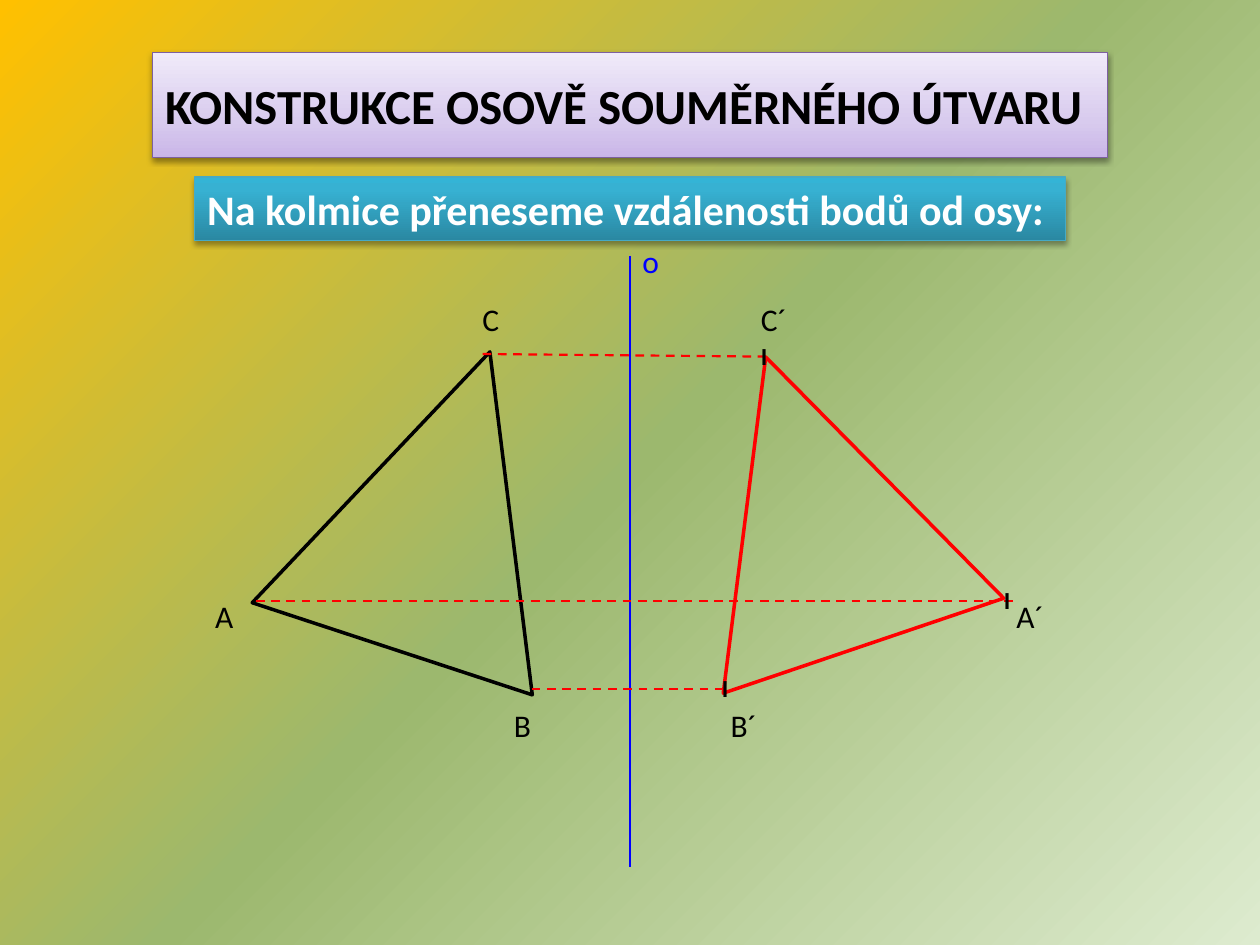
from pptx import Presentation
from pptx.dml.color import RGBColor as RGB
from pptx.enum.dml import MSO_LINE as DASH
from pptx.enum.shapes import MSO_CONNECTOR as CON, MSO_SHAPE as KIND
from pptx.enum.text import MSO_ANCHOR as ANCHOR, MSO_AUTO_SIZE as AUTO, PP_ALIGN as ALIGN
from pptx.oxml.ns import qn
from pptx.util import Pt
from lxml.etree import SubElement as Sub

BLACK = RGB(0x00, 0x00, 0x00)
WHITE = RGB(0xFF, 0xFF, 0xFF)
RED = RGB(0xFF, 0x00, 0x00)
BLUE = RGB(0x00, 0x00, 0xFF)
PURPLE = RGB(0x7D, 0x60, 0xA0)
TEAL = RGB(0x46, 0xAA, 0xC5)
BACK = [(0, RGB(0xDD, 0xEB, 0xCF)), (50, RGB(0x9C, 0xB8, 0x6E)), (100, RGB(0xFF, 0xC0, 0x00))]
LILAC = [(0, RGB(0xC9, 0xB5, 0xE8)), (35, RGB(0xD8, 0xCB, 0xEE)), (100, RGB(0xF0, 0xEA, 0xF9))]
AQUA = [(0, RGB(0x2A, 0x88, 0xA2)), (80, RGB(0x37, 0xB1, 0xD2)), (100, RGB(0x34, 0xB4, 0xD6))]


def write(shape, text, size=18, color=BLACK, bold=False, wrap=False, anchor=ANCHOR.TOP):
    frame = shape.text_frame
    frame.word_wrap = wrap
    frame.auto_size = AUTO.SHAPE_TO_FIT_TEXT
    frame.vertical_anchor = anchor
    para = frame.paragraphs[0]
    para.alignment = ALIGN.LEFT
    run = para.add_run()
    run.text = text
    run.font.name = "Calibri"
    run.font.size = Pt(size)
    run.font.bold = bold
    run.font.color.rgb = color


def blend(fill, root, angle, stops):
    fill.gradient()
    fill.gradient_angle = angle
    group = root.find(".//" + qn("a:gsLst"))
    for old in list(group):
        group.remove(old)
    for pos, color in stops:
        stop = Sub(group, qn("a:gs"), pos=str(pos * 1000))
        Sub(stop, qn("a:srgbClr"), val=str(color))


deck = Presentation()
deck.slide_width, deck.slide_height = Pt(720), Pt(540)
slide = deck.slides.add_slide(deck.slide_layouts[5])
shapes = slide.shapes
blend(slide.background.fill, slide.element, 135, BACK)

title = shapes.title
title.left, title.top, title.width, title.height = Pt(87.1), Pt(39.6), Pt(545.8), Pt(41.2)
step = shapes.add_shape(KIND.RECTANGLE, Pt(111.3), Pt(101.2), Pt(497.4), Pt(36.3))
banners = [
    (title, "KONSTRUKCE OSOVĚ SOUMĚRNÉHO ÚTVARU", 28, BLACK, LILAC, PURPLE, 38, 1.6),
    (step, "Na kolmice přeneseme vzdálenosti bodů od osy:", 24, WHITE, AQUA, TEAL, 35, 1.8),
]
for box, text, size, color, stops, edge, alpha, dist in banners:
    blend(box.fill, box.element, 90, stops)
    box.line.color.rgb = edge
    box.line.width = Pt(0.75)
    box.shadow.inherit = False
    effects = box.element.spPr.find(qn("a:effectLst"))
    shade = Sub(effects, qn("a:outerShdw"), blurRad=str(Pt(3.1)), dist=str(Pt(dist)),
                dir="5400000", rotWithShape="0")
    tint = Sub(shade, qn("a:srgbClr"), val=str(BLACK))
    Sub(tint, qn("a:alpha"), val=str(alpha * 1000))
    write(box, text, size=size, color=color, bold=True, anchor=ANCHOR.MIDDLE)

for left, top, width, height, turn, color in [
    (167.8, 196.6, 168.5, 178.6, 18.2, BLACK),
    (380.9, 199.4, 169.2, 174.2, 341.3, RED),
]:
    tri = shapes.add_shape(KIND.FLOWCHART_EXTRACT, Pt(left), Pt(top), Pt(width), Pt(height))
    tri.rotation = turn
    tri.fill.background()
    tri.line.color.rgb = color
    tri.line.width = Pt(2)
    tri.shadow.inherit = False

for x1, y1, x2, y2, color, dash in [
    (360, 146.2, 360, 495.4, BLUE, None),
    (275.8, 202.3, 437.8, 203.8, RED, DASH.DASH),
    (146.2, 343.4, 579.6, 343.4, RED, DASH.DASH),
    (303.8, 393.8, 416.2, 393.8, RED, DASH.DASH),
]:
    line = shapes.add_connector(CON.STRAIGHT, Pt(x1), Pt(y1), Pt(x2), Pt(y2))
    line.line.color.rgb = color
    line.line.width = Pt(1.25)
    line.line.dash_style = dash
    Sub(line.element.spPr, qn("a:effectLst"))

for text, left, top, width, color, wrap in [
    ("A", 115.9, 337.7, 25.2, BLACK, True),
    ("B", 286.6, 399.6, 28.1, BLACK, True),
    ("C", 268.6, 167.8, 24.5, BLACK, False),
    ("A´", 573.8, 337.7, 33.8, BLACK, True),
    ("B´", 410.4, 399.6, 33.8, BLACK, True),
    ("C´", 427.7, 167.8, 29.5, BLACK, False),
    ("o", 360, 134.6, 24.5, BLUE, False),
]:
    label = shapes.add_textbox(Pt(left), Pt(top), Pt(width), Pt(29))
    write(label, text, color=color, wrap=wrap)

for left, top in [(566.6, 330.5), (405.4, 380.9), (427.7, 191.5)]:
    mark = shapes.add_textbox(Pt(left), Pt(top), Pt(18), Pt(24.3))
    write(mark, "I", size=14, bold=True)

deck.save("out.pptx")
